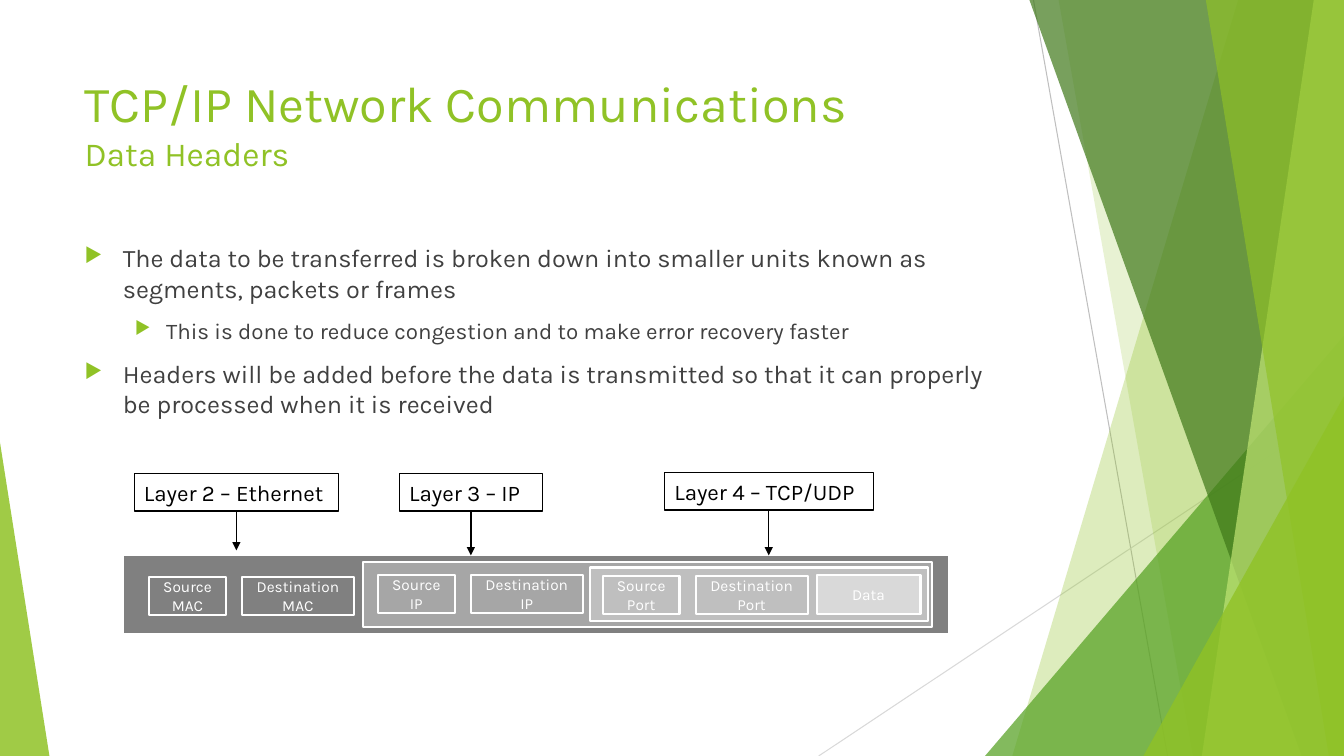
from collections import namedtuple

from lxml import etree
from pptx import Presentation
from pptx.dml.color import RGBColor
from pptx.enum.shapes import MSO_CONNECTOR, MSO_SHAPE
from pptx.enum.text import MSO_ANCHOR, PP_ALIGN
from pptx.oxml.ns import qn
from pptx.util import Emu, Pt

RECTANGLE = MSO_SHAPE.RECTANGLE
TRIANGLE = MSO_SHAPE.ISOSCELES_TRIANGLE
STRAIGHT = MSO_CONNECTOR.STRAIGHT
CENTER, LEFT = PP_ALIGN.CENTER, PP_ALIGN.LEFT
MIDDLE, TOP = MSO_ANCHOR.MIDDLE, MSO_ANCHOR.TOP

SCALE = 9144
FONT = "Karla"
COLORS = {
    "lime": "90C226", "green": "54A021", "forest": "3F7819", "pale": "C0E474",
    "text": "404040", "black": "000000", "white": "FFFFFF",
    "rule": "BFBFBF", "faint_rule": "D9D9D9",
    "ethernet": "808080", "ip": "A6A6A6", "transport": "BFBFBF", "data": "D9D9D9",
}
Box = namedtuple("Box", "left top width height")
PAGE = Box(0, 0, 1333, 750)

BULLETS = [
    (0, "The data to be transferred is broken down into smaller units known as "
        "segments, packets or frames"),
    (1, "This is done to reduce congestion and to make error recovery faster"),
    (0, "Headers will be added before the data is transmitted so that it can "
        "properly be processed when it is received"),
]
BULLET_LEVELS = [(18, 38, 38), (16, 81, 31)]

LAYERS = [
    ("Layer 2 – Ethernet", "MAC", "ethernet", Box(122, 551, 819, 78), (26, 21),
     Box(133, 470, 203, 37), 546),
    ("Layer 3 – IP", "IP", "ip", Box(360, 558, 564, 64), (15, 12),
     Box(396, 470, 142, 37), 551),
    ("Layer 4 – TCP/UDP", "Port", "transport", Box(585, 563, 335, 53), (13, 8),
     Box(659, 469, 207, 37), 551),
]


def px(*lengths):
    """Turn px lengths into EMU."""
    return [Emu(round(length * SCALE)) for length in lengths]


def color(name):
    """Look up a named colour."""
    return RGBColor.from_string(COLORS[name])


def paint(shape, fill=None, opacity=100, line=None, weight=1.5):
    """Set the fill and outline of a shape and remove its shadow."""
    shape.shadow.inherit = False
    if fill:
        shape.fill.solid()
        shape.fill.fore_color.rgb = color(fill)
        if opacity < 100:
            tint = shape._element.spPr.find(qn("a:solidFill"))[0]
            etree.SubElement(tint, qn("a:alpha"), val=str(opacity * 1000))
    else:
        shape.fill.background()
    if line:
        shape.line.color.rgb = color(line)
        shape.line.width = Pt(weight)
    else:
        shape.line.fill.background()


def add_line(page, start, end, line, weight, arrow=False):
    """Draw a straight line, with an arrowhead at its end if asked."""
    connector = page.shapes.add_connector(STRAIGHT, *px(*start, *end))
    connector.line.color.rgb = color(line)
    connector.line.width = Pt(weight)
    properties = connector._element.spPr
    if arrow:
        etree.SubElement(properties.find(qn("a:ln")), qn("a:tailEnd"), type="triangle")
    etree.SubElement(properties, qn("a:effectLst"))


def style(font, size, ink):
    """Set typeface, size and colour of a font."""
    font.name, font.size = FONT, Pt(size)
    font.color.rgb = color(ink)


def add_block(page, box, fill=None, line="white", weight=1.5):
    """Draw an outlined rectangle."""
    block = page.shapes.add_shape(RECTANGLE, *px(*box))
    paint(block, fill, line=line, weight=weight)
    return block


def write(shape, text, size, ink, align, anchor):
    """Put one paragraph of text in a shape."""
    frame = shape.text_frame
    frame.word_wrap, frame.vertical_anchor = True, anchor
    para = frame.paragraphs[0]
    para.text, para.alignment = text, align
    style(para.font, size, ink)


def add_facets(page, box):
    """Draw the translucent green facets along the edges of the box."""
    right, bottom = box.left + box.width, box.top + box.height

    def add_band(top_x, bottom_x, fill, opacity):
        """Draw a band from a slanted edge to the right side."""
        builder = page.shapes.build_freeform(box.left + top_x, box.top, SCALE)
        builder.add_line_segments(
            [(right, box.top), (right, bottom), (box.left + bottom_x, bottom)])
        paint(builder.convert_to_shape(), fill, opacity)

    def add_corner(left, width, height, apex, fill, opacity):
        """Draw a right triangle standing on the bottom side."""
        corner = page.shapes.add_shape(
            TRIANGLE, *px(box.left + left, bottom - height, width, height))
        corner.adjustments[0] = apex
        paint(corner, fill, opacity)

    add_line(page, (box.left + 1025, box.top), (box.left + 1158, bottom), "rule", 0.75)
    add_line(page, (right, box.top + 403), (box.left + 812, bottom), "faint_rule", 0.75)
    add_band(1228, 1004, "lime", 30)
    add_band(1050, 1183, "lime", 20)
    add_corner(977, 356, 417, 1, "green", 72)
    add_band(1021, 1291, "forest", 70)
    add_band(1303, 1192, "pale", 70)
    add_band(1196, 1318, "lime", 65)
    add_corner(1134, 199, 357, 1, "lime", 80)
    add_corner(0, 49, 311, 0, "lime", 85)


def add_title(page, box):
    """Write the title and its smaller second line."""
    frame = page.shapes.add_textbox(*px(*box)).text_frame
    frame.word_wrap = True
    para = frame.paragraphs[0]
    style(para.font, 36, "lime")
    para.add_run().text = "TCP/IP Network Communications"
    para.add_line_break()
    para.add_run().text = "Data Headers"
    for span, size in zip(para.runs, (36, 24)):
        style(span.font, size, "lime")


def add_bullets(page, box):
    """Write the bulleted text."""
    frame = page.shapes.add_textbox(*px(*box)).text_frame
    frame.word_wrap = True
    for index, (level, text) in enumerate(BULLETS):
        para = frame.add_paragraph() if index else frame.paragraphs[0]
        size, margin, hanging = BULLET_LEVELS[level]
        para.text, para.level, para.space_before = text, level, Pt(10)
        style(para.font, size, "text")
        properties = para._p.get_or_add_pPr()
        properties.set("marL", str(margin * SCALE))
        properties.set("indent", str(-hanging * SCALE))
        tint = etree.Element(qn("a:buClr"))
        etree.SubElement(tint, qn("a:srgbClr"), val=COLORS["lime"])
        marks = [tint, etree.Element(qn("a:buSzPct"), val="80000"),
                 etree.Element(qn("a:buChar"), char="▶")]
        for offset, mark in enumerate(marks):
            properties.insert_element_before(mark, "a:tabLst", "a:defRPr", "a:extLst")


def add_field(page, box, text, fill):
    """Draw one header field."""
    write(add_block(page, box, fill), text, 11, "white", CENTER, MIDDLE)


def add_layer(page, box, name, address, fill, inset, label, tip):
    """Draw a layer frame with its two fields, label and arrow."""
    add_block(page, box, fill)
    left, top = box.left + inset[0], box.top + inset[1]
    add_field(page, Box(left, top, 76, 38), f"Source {address}", fill)
    add_field(page, Box(left + 92, top, 111, 38), f"Destination {address}", fill)
    caption = add_block(page, label, line="black", weight=0.75)
    write(caption, name, 16, "black", LEFT, TOP)
    middle = label.left + label.width / 2
    add_line(page, (middle, label.top + label.height), (middle, tip), "black", 1, arrow=True)


def main():
    """Build the slide and save the deck."""
    deck = Presentation()
    deck.slide_width, deck.slide_height = px(PAGE.width, PAGE.height)
    page = deck.slides.add_slide(deck.slide_layouts[6])
    add_facets(page, PAGE)
    add_bullets(page, Box(74, 236, 940, 424))
    for name, address, fill, box, inset, label, tip in LAYERS:
        add_layer(page, box, name, address, fill, inset, label, tip)
    add_field(page, Box(810, 570, 103, 39), "Data", "data")
    add_title(page, Box(74, 67, 940, 144))
    deck.save("out.pptx")


if __name__ == "__main__":
    main()
